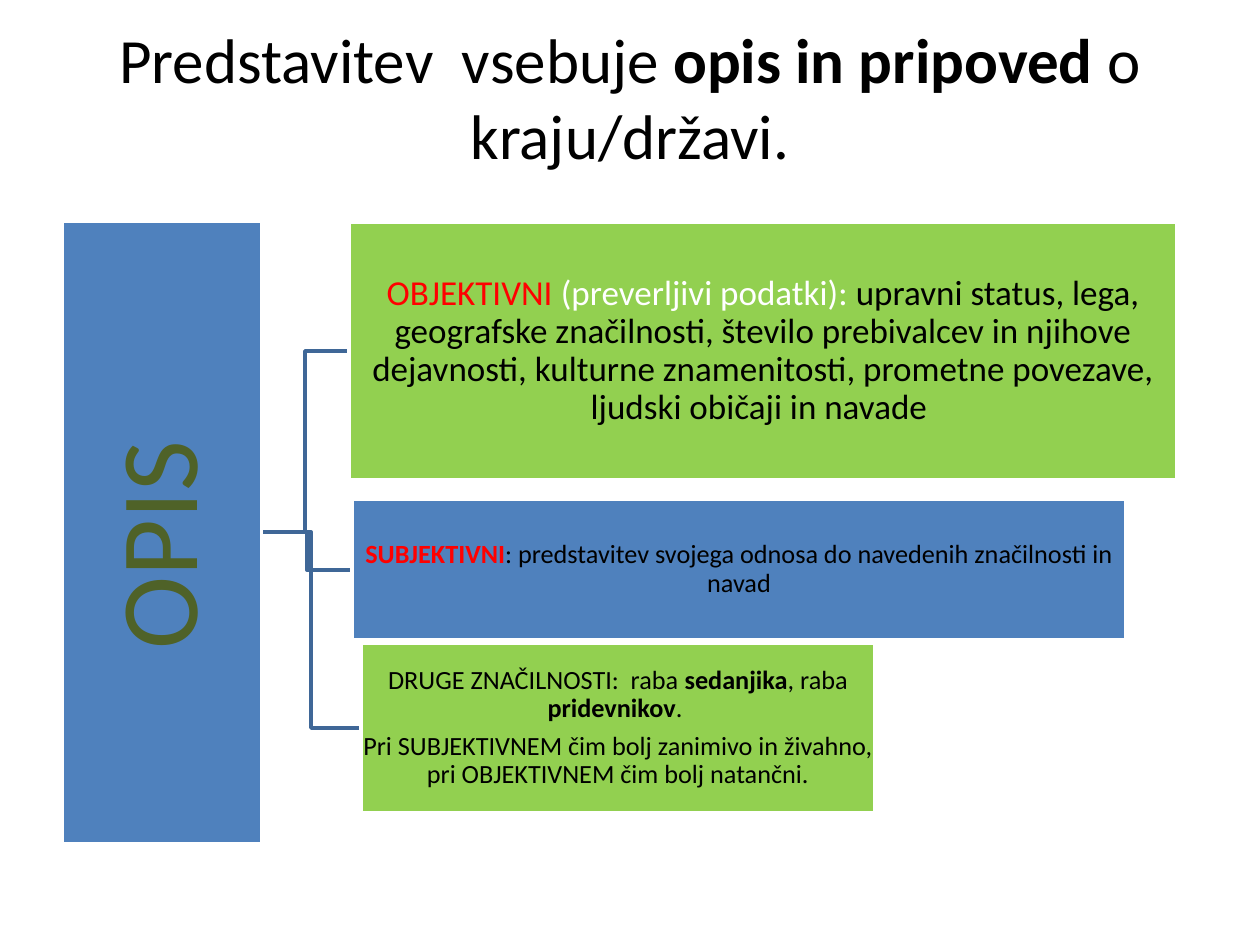
"""Build the slide on description (OPIS) and its three branches."""
from pptx import Presentation
from pptx.dml.color import RGBColor
from pptx.enum.shapes import MSO_SHAPE
from pptx.enum.text import MSO_ANCHOR, PP_ALIGN
from pptx.util import Pt

RECTANGLE = MSO_SHAPE.RECTANGLE
MIDDLE = MSO_ANCHOR.MIDDLE
CENTER = PP_ALIGN.CENTER
SCALE = 914400 / 126

THEME = {
    "font": "Calibri",
    "black": "000000", "white": "FFFFFF", "red": "FF0000", "olive": "4F6228",
    "blue": "4F81BD", "green": "92D050", "connector": "3F6797",
    "title": 36, "trunk": 63, "large": 20, "small": 15, "line": 2,
}


def px(length):
    return round(length * SCALE)


def write(shape, paragraphs, size, inset, spacing):
    frame = shape.text_frame
    frame.word_wrap = True
    frame.vertical_anchor = MIDDLE
    frame.margin_left = frame.margin_right = px(inset)
    frame.margin_top = frame.margin_bottom = px(min(inset, 6))
    for index, runs in enumerate(paragraphs):
        paragraph = frame.paragraphs[0] if index == 0 else frame.add_paragraph()
        paragraph.alignment = CENTER
        paragraph.line_spacing = spacing
        if index < len(paragraphs) - 1:
            paragraph.space_after = Pt(round(size * 0.35))
        for text, color, bold in runs:
            run = paragraph.add_run()
            run.text = text
            run.font.name = THEME["font"]
            run.font.size = Pt(size)
            run.font.bold = bold
            run.font.color.rgb = RGBColor.from_string(THEME[color])


presentation = Presentation()
presentation.slide_width = px(1260)
presentation.slide_height = px(945)
slide = presentation.slides.add_slide(presentation.slide_layouts[6])

title = slide.shapes.add_textbox(px(63), px(38), px(1134), px(117))
write(title, [[
    ("Predstavitev  vsebuje ", "black", False),
    ("opis in pripoved ", "black", True),
    ("o kraju/državi.", "black", False),
]], THEME["title"], 13, 1.0)

trunk = (-149, 433, 622, 199)
objective = (349, 222, 828, 258)
subjective = (352, 499, 774, 141)
other = (361, 643, 514, 170)

trunk_right = trunk[0] + (trunk[2] + trunk[3]) / 2
trunk_middle = trunk[1] + trunk[3] / 2
for left, top, width, height in (other, subjective, objective):
    bend = (trunk_right + left) / 2
    middle = top + height / 2
    builder = slide.shapes.build_freeform(trunk_right, trunk_middle, scale=SCALE)
    builder.add_line_segments(
        [(bend, trunk_middle), (bend, middle), (left, middle)], close=False)
    branch = builder.convert_to_shape()
    branch.shadow.inherit = False
    branch.fill.background()
    branch.line.color.rgb = RGBColor.from_string(THEME["connector"])
    branch.line.width = Pt(THEME["line"])

boxes = [
    (trunk, 270, "blue", "trunk", 5, [[("OPIS ", "olive", False)]]),
    (objective, 0, "green", "large", 1, [[
        ("OBJEKTIVNI ", "red", False),
        ("(preverljivi podatki): ", "white", False),
        ("upravni status, lega, geografske značilnosti, število prebivalcev in "
         "njihove dejavnosti, kulturne znamenitosti, prometne povezave, "
         "ljudski običaji in navade ", "black", False),
    ]]),
    (subjective, 0, "blue", "small", 1, [[
        ("SUBJEKTIVNI", "red", True),
        (": predstavitev svojega odnosa do navedenih značilnosti in navad",
         "black", False),
    ]]),
    (other, 0, "green", "small", 1, [
        [
            ("DRUGE ZNAČILNOSTI:  raba ", "black", False),
            ("sedanjika", "black", True),
            (", raba ", "black", False),
            ("pridevnikov", "black", True),
            (". ", "black", False),
        ],
        [("Pri SUBJEKTIVNEM čim bolj zanimivo in živahno, "
          "pri OBJEKTIVNEM čim bolj natančni.", "black", False)],
    ]),
]
for bounds, rotation, fill, size, inset, paragraphs in boxes:
    box = slide.shapes.add_shape(RECTANGLE, *map(px, bounds))
    box.rotation = rotation
    box.shadow.inherit = False
    box.fill.solid()
    box.fill.fore_color.rgb = RGBColor.from_string(THEME[fill])
    box.line.color.rgb = RGBColor.from_string(THEME["white"])
    box.line.width = Pt(THEME["line"])
    write(box, paragraphs, THEME[size], inset, 0.9)

presentation.save("out.pptx")
